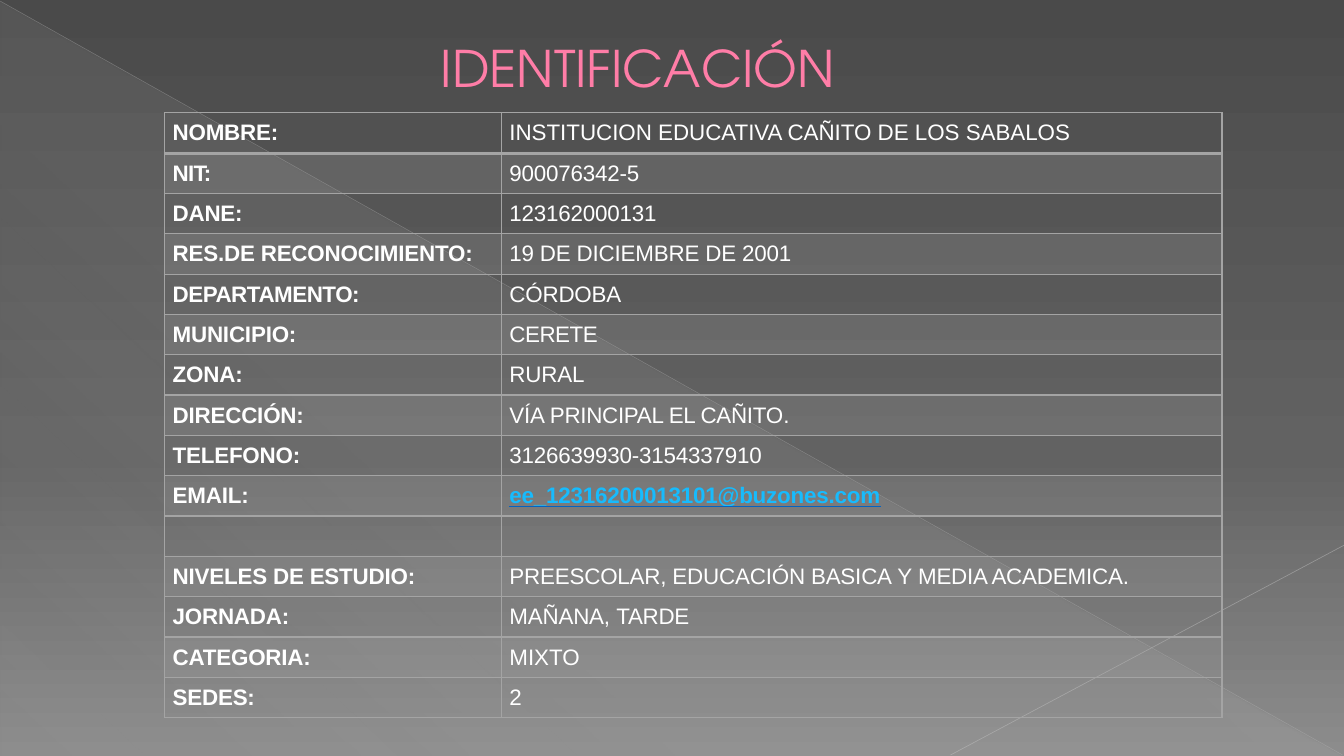
"""Build the school identification slide: a title over a two-column data table."""
from lxml.etree import SubElement
from pptx import Presentation
from pptx.dml.color import RGBColor
from pptx.enum.shapes import MSO_CONNECTOR, MSO_SHAPE
from pptx.enum.text import MSO_ANCHOR
from pptx.oxml.ns import qn
from pptx.util import Pt

WHITE = RGBColor(0xFF, 0xFF, 0xFF)
PINK = RGBColor(0xFF, 0x7D, 0xA7)
EMAIL_BLUE = RGBColor(0x17, 0xBB, 0xFD)
UNDERLINE_BLUE = RGBColor(0x05, 0x63, 0xC1)
GRID_GRAY = RGBColor(0xA4, 0xA4, 0xA4)
GLOW_GRAY = RGBColor(0xD2, 0xD2, 0xD2)
DARK, MIDDLE, LIGHT = (RGBColor(v, v, v) for v in (0x4A, 0x62, 0x8C))

EMAIL = "ee_12316200013101@buzones.com"
TITLE = (("IDENTIFIC", 0), ("A", 0.1), ("CIÓN", 0))
RECORDS = [
    ("NOMBRE:", ["INSTITUCION EDUCATIVA CAÑITO DE LOS SABALOS"]),
    ("NIT:", ["900076342-5"]),
    ("DANE:", ["123162000131"]),
    ("RES.DE RECONOCIMIENTO:", ["19 DE DICIEMBRE DE 2001"]),
    ("DEPARTAMENTO:", ["CÓRDOBA"]),
    ("MUNICIPIO:", ["CERETE"]),
    ("ZONA:", ["RURAL"]),
    ("DIRECCIÓN:", ["VÍA ", "PRINCIPAL EL CAÑITO", "."]),
    ("TELEFONO:", ["3126639930-3154337910"]),
    ("EMAIL:", [EMAIL]),
    ("", []),
    ("NIVELES DE ESTUDIO:", ["PREESCOLAR, EDUCACIÓN BASICA ", "Y ", "MEDIA ACADEMICA."]),
    ("JORNADA:", ["MAÑANA, ", "TARDE"]),
    ("CATEGORIA:", ["MIXTO"]),
    ("SEDES:", ["2"]),
]
TRACKING = {
    RECORDS[0][1][0]: 0, "NIT:": -0.5, "DEPARTAMENTO:": -0.3, "CERETE": -0.3,
    "PRINCIPAL EL CAÑITO": -0.2, "Y ": 0, "TARDE": -0.2, "MIXTO": 0, "2": 0,
}
USUAL_TRACKING = -0.1
BACKDROP_STOPS = [(0, DARK, 100), (60, MIDDLE, 100), (100, LIGHT, 100)]
GLOW_STOPS = [(0, GLOW_GRAY, 10), (70, GLOW_GRAY, 8), (100, GLOW_GRAY, 1)]
RAYS = [
    ((0, 0.72), (959, 539.28), RGBColor(0xBF, 0xBF, 0xBF), 0.39, 35),
    ((960, 389.5), (679, 539.28), RGBColor(0xC6, 0xC6, 0xC6), 0.47, 45),
]
SLIDE_SIZE = (960, 540)
TABLE_AT = (117.5, 80.6)
COLUMNS = (240.6, 514.8)
ROW_HEIGHT = 28.8
HEADER_RULE, RULE = 2.25, 1
TEXT_GAP = 5.7
BAND_OPACITY = 20

CELL_FORMAT = dict(margin_left=0, margin_top=Pt(TEXT_GAP), margin_right=0,
                   margin_bottom=0, vertical_anchor=MSO_ANCHOR.TOP)
TITLE_FORMAT = dict(margin_left=0, margin_top=Pt(1), margin_right=0, margin_bottom=0,
                    vertical_anchor=MSO_ANCHOR.MIDDLE, word_wrap=True)


def assign(target, values):
    for key, value in values.items():
        setattr(target, key, value)


def add_color(parent, color, opacity=100):
    tint = SubElement(parent, qn("a:srgbClr"), val=str(color))
    if opacity < 100:
        SubElement(tint, qn("a:alpha"), val=str(opacity * 1000))


def fade(element, opacity):
    tint = next(element.iter(qn("a:srgbClr")))
    SubElement(tint, qn("a:alpha"), val=str(opacity * 1000))


def set_gradient(element, stops, angle):
    gradient = next(element.iter(qn("a:gradFill")))
    stop_list = gradient.find(qn("a:gsLst"))
    stop_list.clear()
    for position, color, opacity in stops:
        stop = SubElement(stop_list, qn("a:gs"), pos=str(position * 1000))
        add_color(stop, color, opacity)
    gradient.find(qn("a:lin")).set("ang", str(angle * 60000))


def add_run(paragraph, text, tracking, typeface, size, color, bold=False):
    run = paragraph.add_run()
    run.text = text
    assign(run.font, dict(name=typeface, size=Pt(size), bold=bold))
    run.font.color.rgb = color
    run.font._element.set("spc", str(round(tracking * 100)))
    return run


def indent(paragraph, left, space_before):
    paragraph.space_before = Pt(space_before)
    paragraph._p.get_or_add_pPr().set("marL", str(Pt(left)))


def underline_email(run):
    run.font.underline = True
    underline = SubElement(run.font._element, qn("a:uFill"))
    add_color(SubElement(underline, qn("a:solidFill")), UNDERLINE_BLUE)
    run.font._element.find(qn("a:solidFill")).addnext(underline)


def add_borders(cell, row):
    widths = dict(lnL=RULE, lnR=RULE, lnT=HEADER_RULE if row == 1 else RULE,
                  lnB=HEADER_RULE if row == 0 else RULE)
    properties = cell._tc.get_or_add_tcPr()
    for side, width in widths.items():
        border = SubElement(properties, qn(f"a:{side}"), w=str(Pt(width)))
        add_color(SubElement(border, qn("a:solidFill")), GRID_GRAY)


def fill_cell(cell, row, texts, bold):
    assign(cell, CELL_FORMAT)
    add_borders(cell, row)
    if row % 2:
        cell.fill.solid()
        cell.fill.fore_color.rgb = GRID_GRAY
        fade(cell._tc.tcPr.find(qn("a:solidFill")), BAND_OPACITY)
    else:
        cell.fill.background()
    paragraph = cell.text_frame.paragraphs[0]
    if not texts:
        paragraph.font.size = Pt(16)
        return
    indent(paragraph, 5.8, TEXT_GAP)
    for text in texts:
        is_email = text == EMAIL
        run = add_run(paragraph, text, TRACKING.get(text, USUAL_TRACKING), "Arial", 16,
                      EMAIL_BLUE if is_email else WHITE, bold or is_email)
        if is_email:
            underline_email(run)


def add_backdrop(slide):
    slide.background.fill.gradient()
    set_gradient(slide._element, BACKDROP_STOPS, 90)
    glow = slide.shapes.add_shape(MSO_SHAPE.RIGHT_TRIANGLE, Pt(0.7), Pt(1.4), Pt(958.3), Pt(538.6))
    glow.shadow.inherit = False
    glow.line.fill.background()
    glow.fill.gradient()
    set_gradient(glow._element, GLOW_STOPS, 133)
    for start, end, color, width, opacity in RAYS:
        ray = slide.shapes.add_connector(MSO_CONNECTOR.STRAIGHT, *map(Pt, start + end))
        ray.line.color.rgb = color
        ray.line.width = Pt(width)
        fade(ray._element.spPr, opacity)
        SubElement(ray._element.spPr, qn("a:effectLst"))


def add_records(slide):
    table = slide.shapes.add_table(len(RECORDS), len(COLUMNS), *map(Pt, TABLE_AT),
                                   Pt(sum(COLUMNS)), Pt(ROW_HEIGHT * len(RECORDS))).table
    assign(table, dict(first_row=False, horz_banding=False))
    for column, width in zip(table.columns, COLUMNS):
        column.width = Pt(width)
    for row, (label, values) in enumerate(RECORDS):
        table.rows[row].height = Pt(ROW_HEIGHT)
        fill_cell(table.cell(row, 0), row, [label] if label else [], True)
        fill_cell(table.cell(row, 1), row, values, False)


def add_title(slide):
    frame = slide.shapes.add_textbox(Pt(313.9), Pt(25.2), Pt(294.5), Pt(45.4)).text_frame
    assign(frame, TITLE_FORMAT)
    heading = frame.paragraphs[0]
    indent(heading, 1, 1)
    for text, tracking in TITLE:
        add_run(heading, text, tracking, "TeX Gyre Adventor", 36, PINK)


def main():
    deck = Presentation()
    deck.slide_width, deck.slide_height = map(Pt, SLIDE_SIZE)
    slide = deck.slides.add_slide(deck.slide_layouts[6])
    add_backdrop(slide)
    add_records(slide)
    add_title(slide)
    deck.save("out.pptx")


if __name__ == "__main__":
    main()
